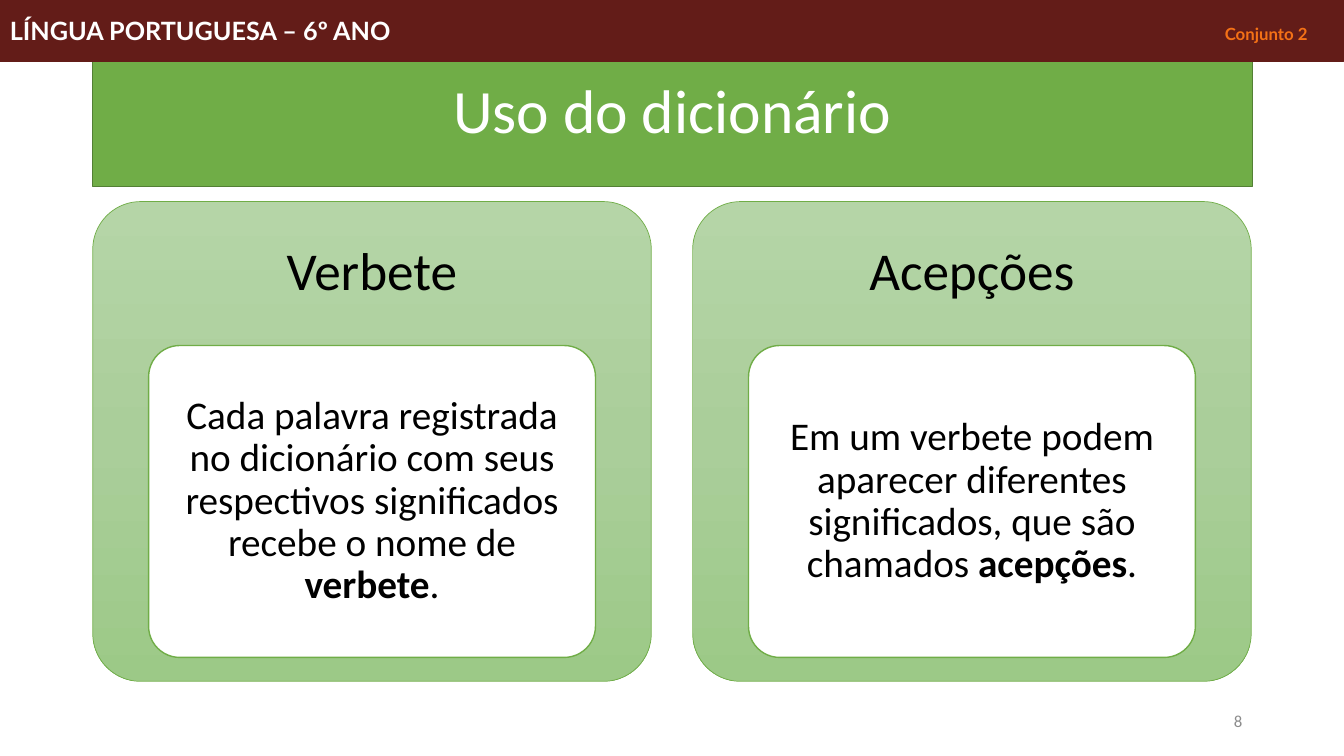
import copy

import pptx
import pptx.util
from lxml import etree
from pptx.dml.color import RGBColor
from pptx.enum.shapes import MSO_SHAPE
from pptx.enum.text import MSO_ANCHOR, MSO_AUTO_SIZE, PP_ALIGN
from pptx.oxml.ns import qn

Inches = pptx.util.Inches
Pt = pptx.util.Pt

COLORS = {
    "green": "70AD47",
    "green_edge": "538035",
    "card_top": "B5D5A7",
    "card_middle": "AACE9A",
    "card_bottom": "9CC987",
    "maroon": "631C18",
    "orange": "F47116",
    "white": "FFFFFF",
    "black": "000000",
    "gray": "8C8C8C",
}

CARDS = [
    ("Verbete",
     "Cada palavra registrada no dicionário com seus respectivos significados recebe o nome de ",
     "verbete"),
    ("Acepções",
     "Em um verbete podem aparecer diferentes significados, que são chamados ",
     "acepções"),
]


def rgb(name):
    return RGBColor.from_string(COLORS[name])


def set_box(shape, left, top, width, height):
    shape.left, shape.top = Inches(left), Inches(top)
    shape.width, shape.height = Inches(width), Inches(height)


def set_line(shape, color, width):
    shape.line.color.rgb = rgb(color)
    shape.line.width = Pt(width)


def add_panel(slide, kind, box, line_color, line_width, fill=None):
    shape = slide.shapes.add_shape(kind, *(Inches(value) for value in box))
    shape.shadow.inherit = False
    set_line(shape, line_color, line_width)
    if fill:
        shape.fill.solid()
        shape.fill.fore_color.rgb = rgb(fill)
    return shape


def format_frame(frame, horizontal=0.1, vertical=0.05):
    frame.word_wrap = True
    frame.auto_size = MSO_AUTO_SIZE.NONE
    frame.vertical_anchor = MSO_ANCHOR.MIDDLE
    frame.margin_left = frame.margin_right = Inches(horizontal)
    frame.margin_top = frame.margin_bottom = Inches(vertical)


def format_paragraph(paragraph, size, color, align, font="Calibri", spacing=None):
    paragraph.alignment = align
    paragraph.line_spacing = spacing
    paragraph.font.name = font
    paragraph.font.size = Pt(size)
    paragraph.font.color.rgb = rgb(color)


def add_text(slide, text, box, size, color, align, margin=0.1, spacing=None):
    text_box = slide.shapes.add_textbox(*(Inches(value) for value in box))
    format_frame(text_box.text_frame, margin, margin)
    paragraph = text_box.text_frame.paragraphs[0]
    paragraph.text = text
    format_paragraph(paragraph, size, color, align, spacing=spacing)


def fill_card_gradient(shape):
    shape.fill.gradient()
    shape.fill.gradient_angle = 270
    stop_list = shape.element.spPr.find(qn("a:gradFill")).find(qn("a:gsLst"))
    stop_list.insert(1, copy.deepcopy(stop_list[0]))
    names = ("card_top", "card_middle", "card_bottom")
    for index, (stop, name) in enumerate(zip(shape.fill.gradient_stops, names)):
        stop.color.rgb = rgb(name)
        stop.position = index / 2


def add_title(slide, left, top, width, height):
    title = slide.shapes.title
    set_box(title, left, top, width, height)
    title.fill.solid()
    title.fill.fore_color.rgb = rgb("green")
    set_line(title, "green_edge", 1)
    format_frame(title.text_frame)
    paragraph = title.text_frame.paragraphs[0]
    paragraph.text = "Uso do dicionário"
    format_paragraph(paragraph, 44, "white", PP_ALIGN.CENTER, spacing=0.9)


def add_card(slide, left, top, width, height, heading, definition, term):
    card = add_panel(slide, MSO_SHAPE.ROUNDED_RECTANGLE,
                     (left, top, width, height), "green", 0.5)
    card.adjustments[0] = 0.1
    fill_card_gradient(card)
    add_text(slide, heading, (left, top, width, 0.3 * height), 38, "black",
             PP_ALIGN.CENTER, 0.16, 0.9)

    inner_box = (left + 0.1 * width, top + 0.3 * height, 0.8 * width, 0.65 * height)
    inner = add_panel(slide, MSO_SHAPE.ROUNDED_RECTANGLE, inner_box, "green", 1, "white")
    inner.adjustments[0] = 0.1
    format_frame(inner.text_frame, 0.08, 0.06)
    paragraph = inner.text_frame.paragraphs[0]
    format_paragraph(paragraph, 28, "black", PP_ALIGN.CENTER, spacing=0.9)
    for text, bold in ((definition, False), (term, True), (".", False)):
        run = paragraph.add_run()
        run.text = text
        run.font.bold = bold


def add_header(slide, left, top, width, height):
    header = add_panel(slide, MSO_SHAPE.RECTANGLE, (left, top, width, height),
                       "maroon", 0.75, "maroon")
    format_frame(header.text_frame)
    paragraph = header.text_frame.paragraphs[0]
    format_paragraph(paragraph, 18, "white", PP_ALIGN.LEFT, font="Lato")
    paragraph.font.bold = True
    properties = paragraph._p.get_or_add_pPr()
    tabs = etree.Element(qn("a:tabLst"))
    etree.SubElement(tabs, qn("a:tab"), pos=str(Inches(width - 1.28)), algn="l")
    properties.find(qn("a:defRPr")).addprevious(tabs)
    paragraph.add_run().text = "LÍNGUA PORTUGUESA – 6º ANO\t"
    label = paragraph.add_run()
    label.text = "Conjunto 2"
    label.font.size = Pt(12)
    label.font.color.rgb = rgb("orange")


def main():
    presentation = pptx.Presentation()
    presentation.slide_width = Inches(13.33)
    presentation.slide_height = Inches(7.5)
    slide = presentation.slides.add_slide(presentation.slide_layouts[5])
    add_title(slide, 0.92, 0.4, 11.5, 1.45)
    for index, (heading, definition, term) in enumerate(CARDS):
        add_card(slide, 0.92 + 5.95 * index, 2, 5.54, 4.76, heading, definition, term)
    add_text(slide, "8", (9.42, 6.95, 3, 0.4), 12, "gray", PP_ALIGN.RIGHT)
    add_header(slide, 0, 0, 13.33, 0.61)
    presentation.save("out.pptx")


if __name__ == "__main__":
    main()
